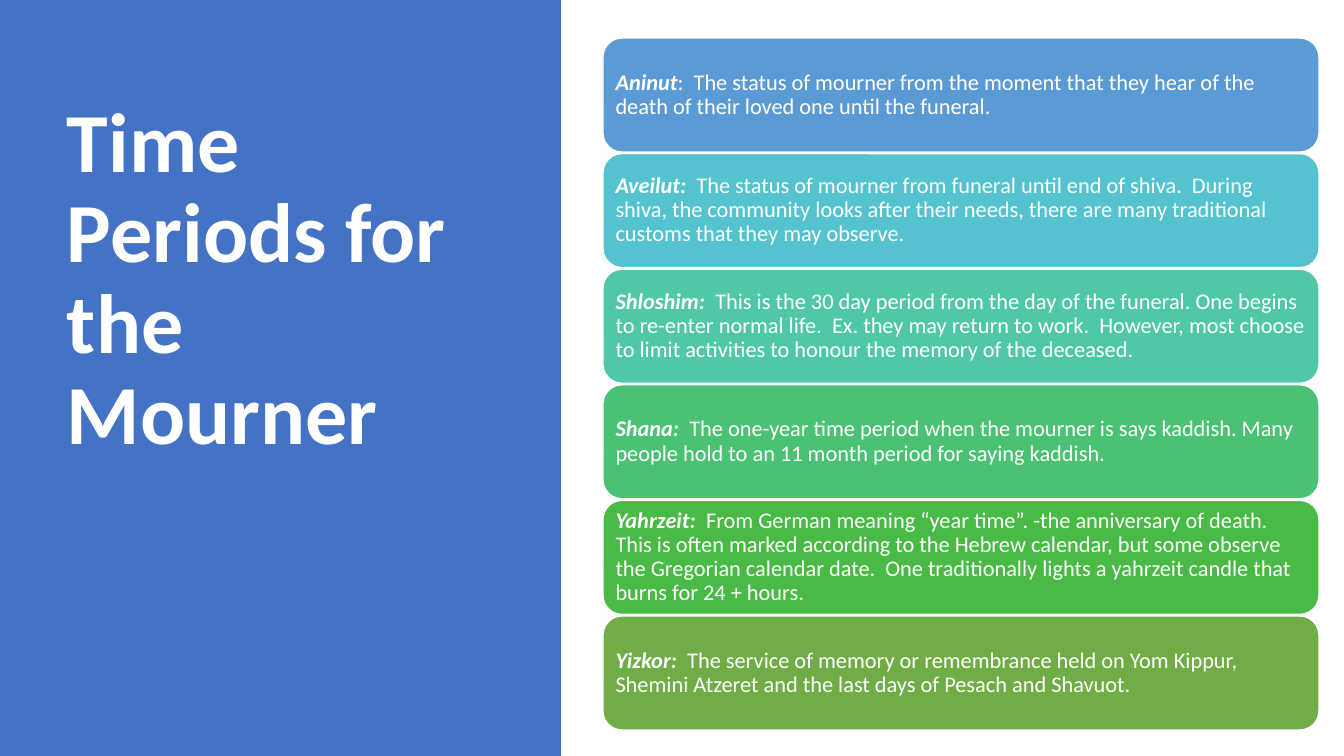
"""Build the slide on the time periods for the mourner."""
from pptx import Presentation
from pptx.dml.color import RGBColor
from pptx.enum.shapes import MSO_SHAPE
from pptx.enum.text import MSO_ANCHOR, PP_ALIGN
from pptx.util import Emu, Pt

TITLE = "Time Periods for the Mourner"
PERIODS = [
    ("Aninut", ":  The status of mourner from the moment that they hear of the death of "
     "their loved one until the funeral.", "aninut"),
    ("Aveilut: ", " The status of mourner from funeral until end of shiva.  During shiva, "
     "the community looks after their needs, there are many traditional customs that "
     "they may observe.", "aveilut"),
    ("Shloshim:  ", "This is the 30 day period from the day of the funeral. One begins to "
     "re-enter normal life.  Ex. they may return to work.  However, most choose to limit "
     "activities to honour the memory of the deceased.", "shloshim"),
    ("Shana:  ", "The one-year time period when the mourner is says kaddish. Many people "
     "hold to an 11 month period for saying kaddish.", "shana"),
    ("Yahrzeit:  ", "From German meaning “year time”. -the anniversary of death.  This is "
     "often marked according to the Hebrew calendar, but some observe the Gregorian "
     "calendar date.  One traditionally lights a yahrzeit candle that burns for 24 + "
     "hours.", "yahrzeit"),
    ("Yizkor:  ", "The service of memory or remembrance held on Yom Kippur, Shemini Atzeret "
     "and the last days of Pesach and Shavuot.", "yizkor"),
]
COLORS = {
    "panel": "4472C4", "white": "FFFFFF",
    "aninut": "5B9BD5", "aveilut": "55C3CF", "shloshim": "50C8A7",
    "shana": "4BC174", "yahrzeit": "4ABA46", "yizkor": "70AD47",
}
FONT = "Calibri"
SLIDE_W, SLIDE_H = 1344, 756
PANEL_W = 561
TITLE_BOX = (57, 69, 419, 607)
TITLE_INSETS = (10, 5, 10, 188)
CARD_LEFT, CARD_W, CARD_H = 603, 716, 114
FIRST_TOP, LAST_TOP = 38, 616
CARD_INSETS = (7, 7, 7, 7)


def px(length):
    return Emu(round(length * 914400 / 100.8))


def color(name):
    return RGBColor.from_string(COLORS[name])


def write(frame, runs, *, size, insets):
    """Fill a frame with (text, bold, italic) runs in one paragraph."""
    frame.word_wrap = True
    frame.vertical_anchor = MSO_ANCHOR.MIDDLE
    (frame.margin_left, frame.margin_top,
     frame.margin_right, frame.margin_bottom) = map(px, insets)
    paragraph = frame.paragraphs[0]
    paragraph.alignment = PP_ALIGN.LEFT
    paragraph.line_spacing = 0.9
    for text, bold, italic in runs:
        run = paragraph.add_run()
        run.text = text
        font = run.font
        font.name, font.size, font.bold, font.italic = FONT, Pt(size), bold, italic
        font.color.rgb = color("white")


def add_block(slide, preset, box, fill):
    block = slide.shapes.add_shape(preset, *map(px, box))
    block.shadow.inherit = False
    block.fill.solid()
    block.fill.fore_color.rgb = color(fill)
    return block


def main():
    deck = Presentation()
    deck.slide_width, deck.slide_height = px(SLIDE_W), px(SLIDE_H)
    slide = deck.slides.add_slide(deck.slide_layouts[5])

    panel = add_block(slide, MSO_SHAPE.RECTANGLE, (0, 0, PANEL_W, SLIDE_H), "panel")
    panel.line.fill.background()
    title = slide.shapes.title
    title.left, title.top, title.width, title.height = map(px, TITLE_BOX)
    write(title.text_frame, [(TITLE, True, False)], size=60, insets=TITLE_INSETS)
    title.element.addprevious(panel.element)

    pitch = (LAST_TOP - FIRST_TOP) / (len(PERIODS) - 1)
    for row, (term, meaning, fill) in enumerate(PERIODS):
        box = (CARD_LEFT, FIRST_TOP + row * pitch, CARD_W, CARD_H)
        card = add_block(slide, MSO_SHAPE.ROUNDED_RECTANGLE, box, fill)
        card.line.color.rgb = color("white")
        card.line.width = Pt(1)
        write(card.text_frame, [(term, True, True), (meaning, False, False)],
              size=16, insets=CARD_INSETS)

    deck.save("out.pptx")


if __name__ == "__main__":
    main()
